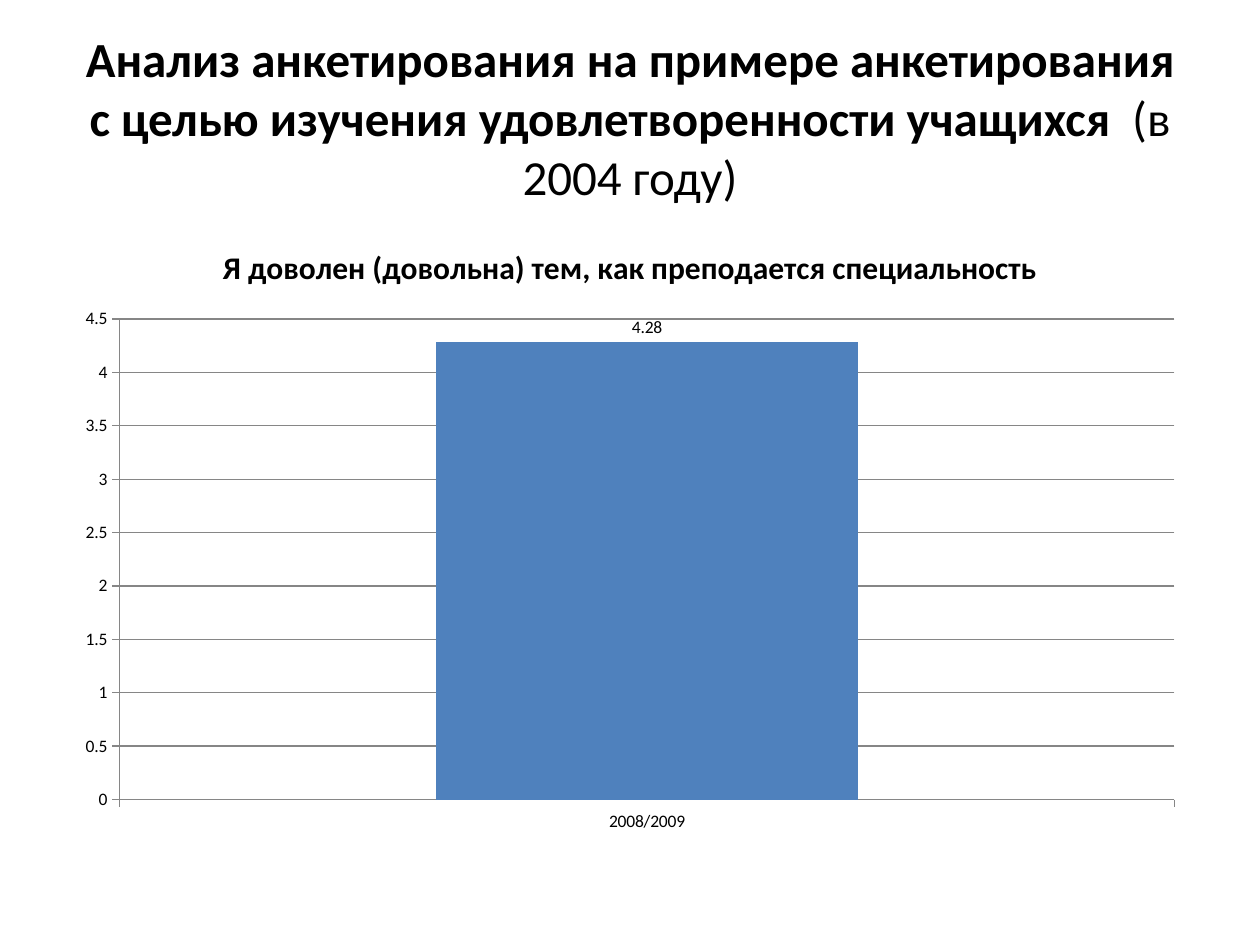
from pptx import Presentation
from pptx.chart.data import CategoryChartData
from pptx.dml.color import RGBColor
from pptx.enum.chart import XL_CHART_TYPE, XL_LABEL_POSITION, XL_TICK_MARK
from pptx.enum.text import MSO_ANCHOR, PP_ALIGN
from pptx.util import Emu, Pt

EMU_PER_PX = 9144  # 100 px to the inch
BLANK_LAYOUT = 6
COLUMNS = XL_CHART_TYPE.COLUMN_CLUSTERED
OUTSIDE_END = XL_LABEL_POSITION.OUTSIDE_END
TICK_OUTSIDE = XL_TICK_MARK.OUTSIDE
MIDDLE = MSO_ANCHOR.MIDDLE
CENTER = PP_ALIGN.CENTER

BLACK = RGBColor(0x00, 0x00, 0x00)
BLUE = RGBColor(0x4F, 0x81, 0xBD)
GRAY = RGBColor(0x86, 0x86, 0x86)


def px(length):
    return Emu(length * EMU_PER_PX)


class SlideBuilder:
    """Holds the text style and the slide being filled."""

    font_name = "Calibri"
    text_color = BLACK

    def __init__(self, slide):
        self.slide = slide

    def style_font(self, font, size, bold=None):
        font.name = self.font_name
        font.size = Pt(size)
        font.color.rgb = self.text_color
        font.bold = bold

    def heading(self, left, top, width, height, spans, size):
        """Add one centred paragraph of (text, bold) spans."""
        box = self.slide.shapes.add_textbox(px(left), px(top), px(width), px(height))
        frame = box.text_frame
        frame.word_wrap = True
        frame.vertical_anchor = MIDDLE
        para = frame.paragraphs[0]
        para.alignment = CENTER
        self.style_font(para.font, size)
        for text, bold in spans:
            span = para.add_run()
            span.text = text
            self.style_font(span.font, size, bold)

    def column_chart(self, left, top, width, height, title, categories, name, values):
        data = CategoryChartData()
        data.categories = categories
        data.add_series(name, values)
        chart = self.slide.shapes.add_chart(
            COLUMNS, px(left), px(top), px(width), px(height), data
        ).chart
        self.style_font(chart.font, 10)
        chart.has_legend = False

        chart.has_title = True
        chart.chart_title.include_in_layout = False
        para = chart.chart_title.text_frame.paragraphs[0]
        span = para.add_run()
        span.text = title
        self.style_font(para.font, 18, True)
        self.style_font(span.font, 18, True)

        for axis in (chart.category_axis, chart.value_axis):
            axis.major_tick_mark = TICK_OUTSIDE
            axis.format.line.color.rgb = GRAY
        chart.value_axis.has_major_gridlines = True
        chart.value_axis.major_gridlines.format.line.color.rgb = GRAY

        plot = chart.plots[0]
        plot.gap_width = 150
        plot.vary_by_categories = False
        series = plot.series[0]
        series.invert_if_negative = False
        series.format.fill.solid()
        series.format.fill.fore_color.rgb = BLUE
        labels = series.data_labels
        labels.show_value = True
        labels.position = OUTSIDE_END
        self.style_font(labels.font, 10)


def main():
    deck = Presentation()
    deck.slide_width, deck.slide_height = px(1000), px(750)
    page = SlideBuilder(deck.slides.add_slide(deck.slide_layouts[BLANK_LAYOUT]))
    page.heading(
        50, 30, 900, 125,
        [
            ("Анализ анкетирования на примере анкетирования "
             "с целью изучения удовлетворенности учащихся  ", True),
            ("(в 2004 году)", False),
        ],
        size=28,
    )
    page.column_chart(
        50, 175, 900, 495,
        title="Я доволен (довольна) тем, как преподается специальность",
        categories=["2008/2009"],
        name="Series 1",
        values=[4.28],
    )
    deck.save("out.pptx")


if __name__ == "__main__":
    main()
